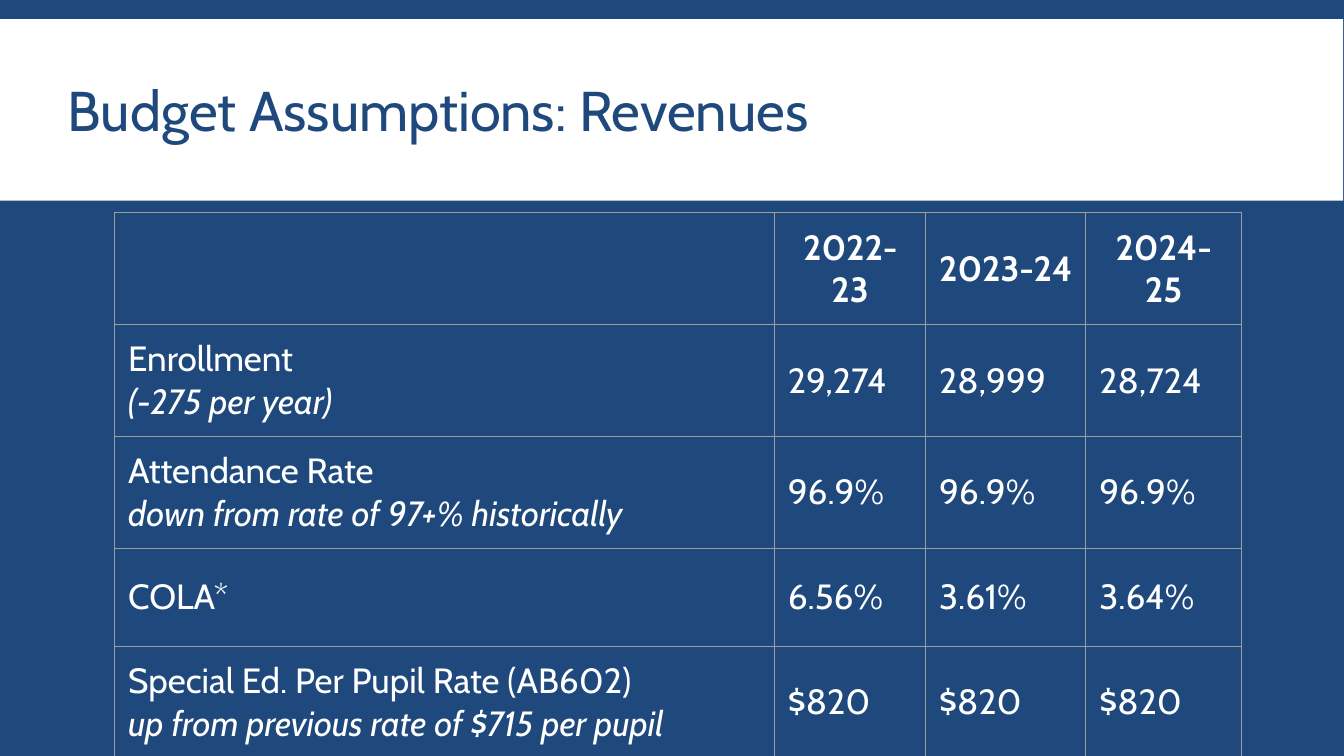
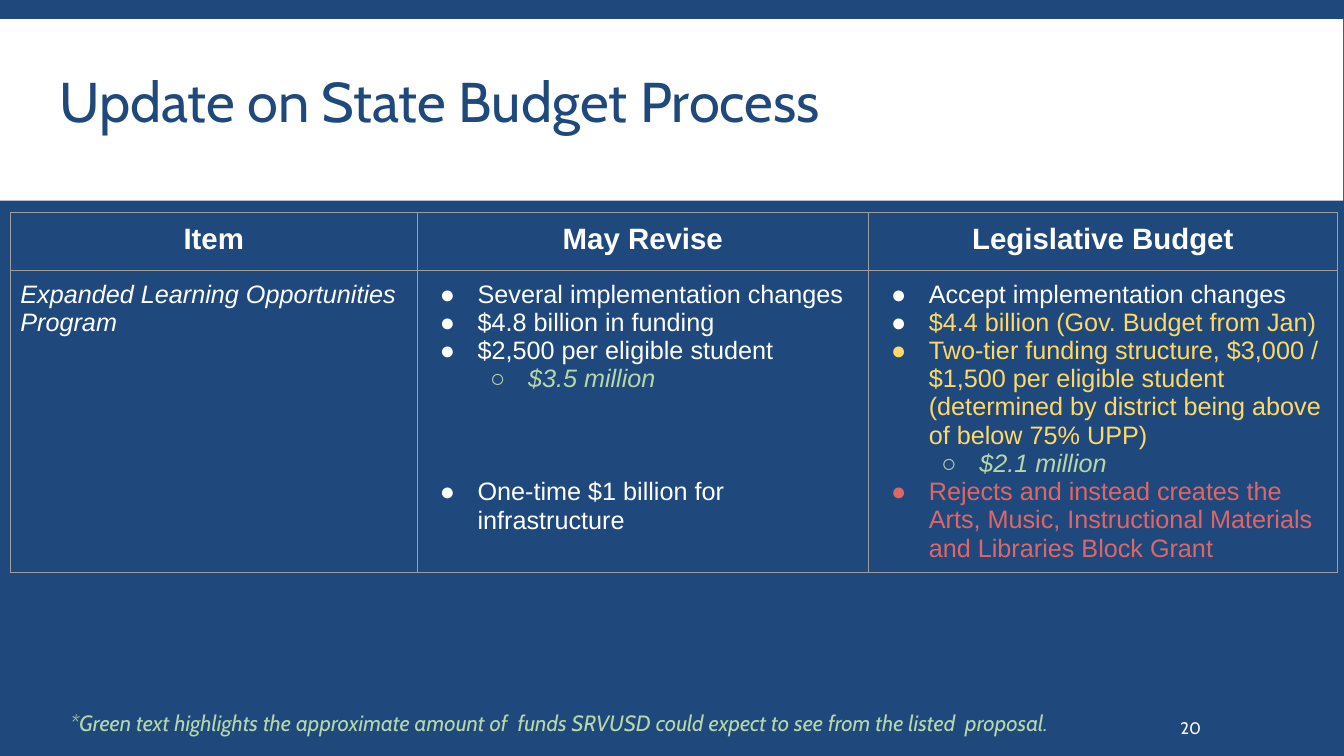
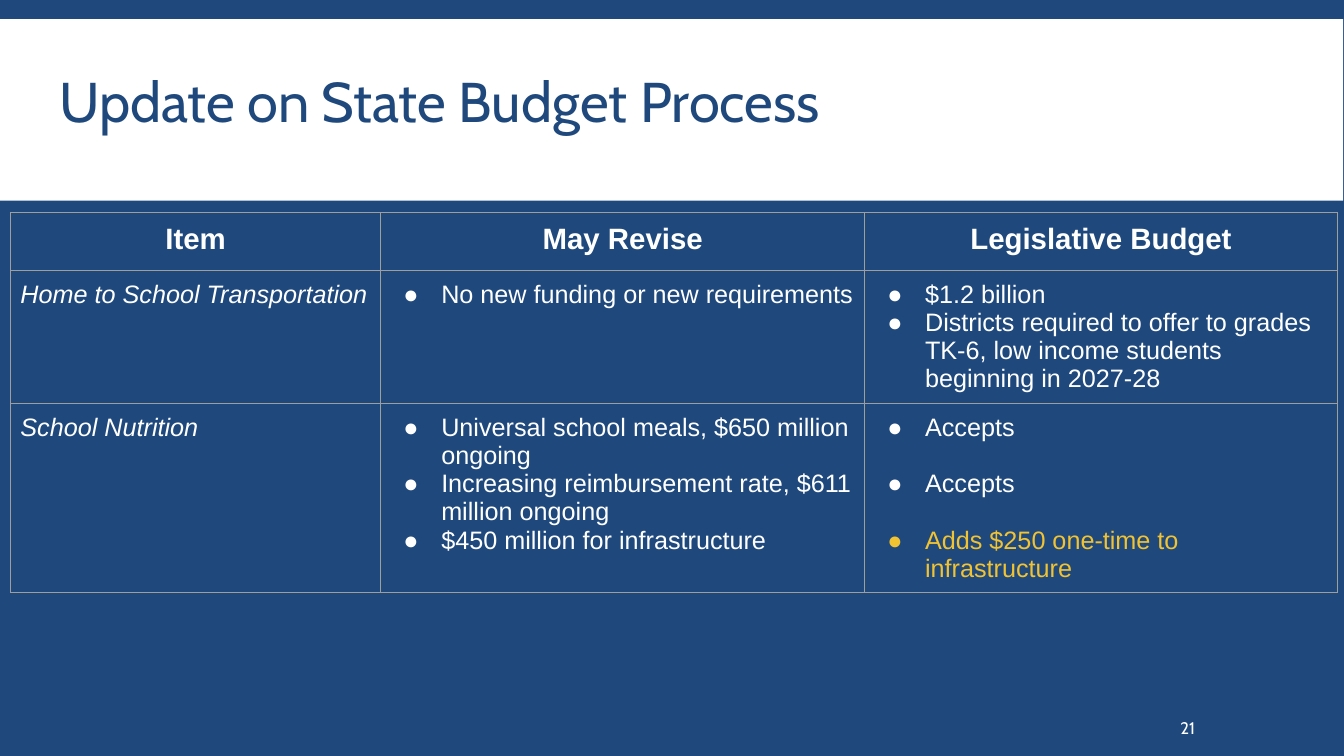
"""Builds three budget slides with tables under a shared title band."""
from lxml.etree import SubElement
from pptx import Presentation
from pptx.dml.color import RGBColor
from pptx.enum.shapes import MSO_SHAPE
from pptx.enum.text import MSO_ANCHOR, MSO_AUTO_SIZE, PP_ALIGN
from pptx.oxml.ns import qn
from pptx.util import Pt

NAVY, WHITE, GRAY = "1F497D", "FFFFFF", "9E9E9E"
GREEN, YELLOW, GOLD, RED = "B6D7A8", "FFD966", "F1C232", "E06666"
LINE_GAP = 20.2

BASE = {"font": "Arial", "size": 18, "color": WHITE}
POINT = BASE | {"bullet": "●", "margin": 36}
STYLES = {
    "year": {"font": "Cabin", "size": 25, "color": WHITE, "bold": True, "align": PP_ALIGN.CENTER},
    "figure": {"font": "Cabin", "size": 25, "color": WHITE},
    "remark": {"font": "Cabin", "size": 25, "color": WHITE, "italic": True},
    "head": BASE | {"size": 21, "bold": True, "align": PP_ALIGN.CENTER},
    "item": BASE | {"italic": True},
    "point": POINT,
    "point after line": POINT | {"before": LINE_GAP},
    "point after three lines": POINT | {"before": 3 * LINE_GAP},
    "yellow text": POINT | {"color": YELLOW, "bullet color": WHITE},
    "yellow point": POINT | {"color": YELLOW},
    "gold point": POINT | {"color": GOLD, "before": LINE_GAP},
    "red point": POINT | {"color": RED},
    "amount": BASE | {"color": GREEN, "italic": True, "bullet": "○", "margin": 72, "level": 1},
    "title": {"font": "Cabin", "size": 40, "color": NAVY, "align": PP_ALIGN.LEFT, "spacing": 0.85},
    "number": {"font": "Cabin", "size": 12, "color": WHITE},
    "note": {"font": "Cabin", "size": 15.8, "color": GREEN, "italic": True},
}

REVENUES = [
    ("Enrollment", "(-275 per year)", "29,274", "28,999", "28,724"),
    ("Attendance Rate", "down from rate of 97+% historically", "96.9%", "96.9%", "96.9%"),
    ("COLA*", "", "6.56%", "3.61%", "3.64%"),
    ("Special Ed. Per Pupil Rate (AB602)", "up from previous rate of $715 per pupil",
     "$820", "$820", "$820"),
]
REVENUE_ROWS = [[[]] + [[(year, "year")] for year in ("2022-23", "2023-24", "2024-25")]]
for name, remark, *figures in REVENUES:
    label = [(name, "figure")] + ([(remark, "remark")] if remark else [])
    REVENUE_ROWS.append([label] + [[(figure, "figure")] for figure in figures])

PROCESS_HEAD = [[(text, "head")] for text in ("Item", "May Revise", "Legislative Budget")]
LEARNING_ROW = [
    [("Expanded Learning Opportunities Program", "item")],
    [("Several implementation changes", "point"),
     ("$4.8 billion in funding", "point"),
     ("$2,500 per eligible student", "point"),
     ("$3.5 million", "amount"),
     ("One-time $1 billion for infrastructure", "point after three lines")],
    [("Accept implementation changes", "point"),
     ("$4.4 billion (Gov. Budget from Jan)", "yellow text"),
     ("Two-tier funding structure, $3,000 / $1,500 per eligible student "
      "(determined by district being above of below 75% UPP)", "yellow point"),
     ("$2.1 million", "amount"),
     ("Rejects and instead creates the Arts, Music, Instructional Materials "
      "and Libraries Block Grant", "red point")],
]
TRANSPORT_ROW = [
    [("Home to School Transportation", "item")],
    [("No new funding or new requirements", "point")],
    [("$1.2 billion", "point"),
     ("Districts required to offer to grades TK-6, low income students "
      "beginning in 2027-28", "point")],
]
NUTRITION_ROW = [
    [("School Nutrition", "item")],
    [("Universal school meals, $650 million ongoing", "point"),
     ("Increasing reimbursement rate, $611 million ongoing", "point"),
     ("$450 million for infrastructure", "point")],
    [("Accepts", "point"),
     ("Accepts", "point after line"),
     ("Adds $250 one-time to infrastructure", "gold point")],
]

REVENUE_TITLE = {"box": (38.9, 45.4, 882, 72), "insets": (9.6,) * 4}
PROCESS_TITLE = {"box": (35.3, 15.8, 770.4, 118.8), "insets": (7.2, 3.6, 7.2, 3.6)}
REVENUE_TABLE = {"left": 82, "inset": 9.6, "anchor": MSO_ANCHOR.MIDDLE}
PROCESS_TABLE = {"left": 7.4, "inset": 7.2, "anchor": MSO_ANCHOR.TOP}
TABLE_TOP = 152
NUMBER_BOX, NUMBER_INSETS = (839.5, 505.4, 74.2, 28.8), (3.6, 3.6, 7.2, 3.6)
NOTE_BOX, NOTE_INSETS = (43.2, 499.7, 876.2, 28.8), (7.2,) * 4

SLIDES = [
    {"title": "Budget Assumptions: Revenues", "title format": REVENUE_TITLE,
     "table format": REVENUE_TABLE, "rows": REVENUE_ROWS,
     "widths": (471.2, 108, 114.5, 111), "heights": (77, 70, 70, 70, 70)},
    {"title": "Update on State Budget Process", "title format": PROCESS_TITLE,
     "table format": PROCESS_TABLE, "rows": [PROCESS_HEAD, LEARNING_ROW],
     "widths": (290.6, 322.3, 335), "heights": (41, 43.2), "number": "20",
     "note": "*Green text highlights the approximate amount of  funds SRVUSD "
             "could expect to see from the listed  proposal."},
    {"title": "Update on State Budget Process", "title format": PROCESS_TITLE,
     "table format": PROCESS_TABLE, "rows": [PROCESS_HEAD, TRANSPORT_ROW, NUTRITION_ROW],
     "widths": (264.6, 345.6, 337.7), "heights": (41, 39, 39), "number": "21"},
]


def color(value):
    """Turn a hex string into a colour."""
    return RGBColor.from_string(value)


def add_bullet(paragraph, style):
    """Give a paragraph a hanging bullet."""
    properties = paragraph._p.get_or_add_pPr()
    properties.set("marL", str(Pt(style["margin"])))
    properties.set("indent", str(Pt(-27)))
    bullet_color = SubElement(properties, qn("a:buClr"))
    SubElement(bullet_color, qn("a:srgbClr"), val=style.get("bullet color", style["color"]))
    SubElement(properties, qn("a:buFont"), typeface=style["font"])
    SubElement(properties, qn("a:buChar"), char=style["bullet"])


def write(frame, lines):
    """Write (text, style name) lines into a text frame."""
    for index, (text, style_name) in enumerate(lines):
        style = STYLES[style_name]
        paragraph = frame.add_paragraph() if index else frame.paragraphs[0]
        settings = {"alignment": style.get("align", PP_ALIGN.LEFT),
                    "level": style.get("level", 0),
                    "line_spacing": style.get("spacing", 1.0),
                    "space_before": Pt(style.get("before", 0))}
        for key, value in settings.items():
            setattr(paragraph, key, value)
        if "bullet" in style:
            add_bullet(paragraph, style)
        run = paragraph.add_run()
        run.text = text
        font_settings = {"name": style["font"], "size": Pt(style["size"]),
                         "bold": style.get("bold", False), "italic": style.get("italic", False)}
        for key, value in font_settings.items():
            setattr(run.font, key, value)
        run.font.color.rgb = color(style["color"])


def set_insets(target, insets):
    """Set left, top, right and bottom margins of a frame or cell."""
    for side, inset in zip(("left", "top", "right", "bottom"), insets):
        setattr(target, f"margin_{side}", Pt(inset))


def format_text(shape, text, style_name, insets, anchor):
    """Fill a title or text box."""
    frame = shape.text_frame
    frame.word_wrap = True
    frame.auto_size = MSO_AUTO_SIZE.NONE
    frame.vertical_anchor = anchor
    set_insets(frame, insets)
    write(frame, [(text, style_name)])


def add_text(slide, box, *content):
    """Add a text box."""
    format_text(slide.shapes.add_textbox(*map(Pt, box)), *content)


def add_title(slide, text, layout):
    """Move and fill the title placeholder."""
    title = slide.shapes.title
    for key, value in zip(("left", "top", "width", "height"), layout["box"]):
        setattr(title, key, Pt(value))
    format_text(title, text, "title", layout["insets"], MSO_ANCHOR.MIDDLE)


def add_borders(cell):
    """Draw a thin line on all sides of a cell."""
    properties = cell._tc.get_or_add_tcPr()
    for side in "LRTB":
        line = SubElement(properties, qn(f"a:ln{side}"), w=str(Pt(0.75)))
        fill = SubElement(line, qn("a:solidFill"))
        SubElement(fill, qn("a:srgbClr"), val=GRAY)


def add_table(slide, rows, widths, heights, layout):
    """Add a bordered table without fill."""
    table = slide.shapes.add_table(len(rows), len(widths), Pt(layout["left"]), Pt(TABLE_TOP),
                                   Pt(sum(widths)), Pt(sum(heights))).table
    table.first_row = table.horz_banding = False
    for column, width in zip(table.columns, widths):
        column.width = Pt(width)
    for row, height, contents in zip(table.rows, heights, rows):
        row.height = Pt(height)
        for cell, lines in zip(row.cells, contents):
            add_borders(cell)
            cell.fill.background()
            cell.vertical_anchor = layout["anchor"]
            set_insets(cell, (layout["inset"],) * 4)
            write(cell.text_frame, lines)


def add_band(slide, layout):
    """Place the white title band behind everything on the layout."""
    band = slide.shapes.add_shape(MSO_SHAPE.RECTANGLE, 0, Pt(13.7), Pt(959.5), Pt(129.6))
    band.shadow.inherit = False
    band.fill.solid()
    band.fill.fore_color.rgb = color(WHITE)
    band.line.fill.background()
    layout.shapes.element.insert(2, band.element)


def main():
    """Build and save the presentation."""
    presentation = Presentation()
    presentation.slide_width, presentation.slide_height = Pt(960), Pt(540)
    background = presentation.slide_master.background.fill
    background.solid()
    background.fore_color.rgb = color(NAVY)
    layout = presentation.slide_layouts[5]
    for index, content in enumerate(SLIDES):
        slide = presentation.slides.add_slide(layout)
        if index == 0:
            add_band(slide, layout)
        add_title(slide, content["title"], content["title format"])
        add_table(slide, content["rows"], content["widths"], content["heights"],
                  content["table format"])
        if "number" in content:
            add_text(slide, NUMBER_BOX, content["number"], "number", NUMBER_INSETS,
                     MSO_ANCHOR.MIDDLE)
        if "note" in content:
            add_text(slide, NOTE_BOX, content["note"], "note", NOTE_INSETS, MSO_ANCHOR.TOP)
    presentation.save("out.pptx")


if __name__ == "__main__":
    main()
